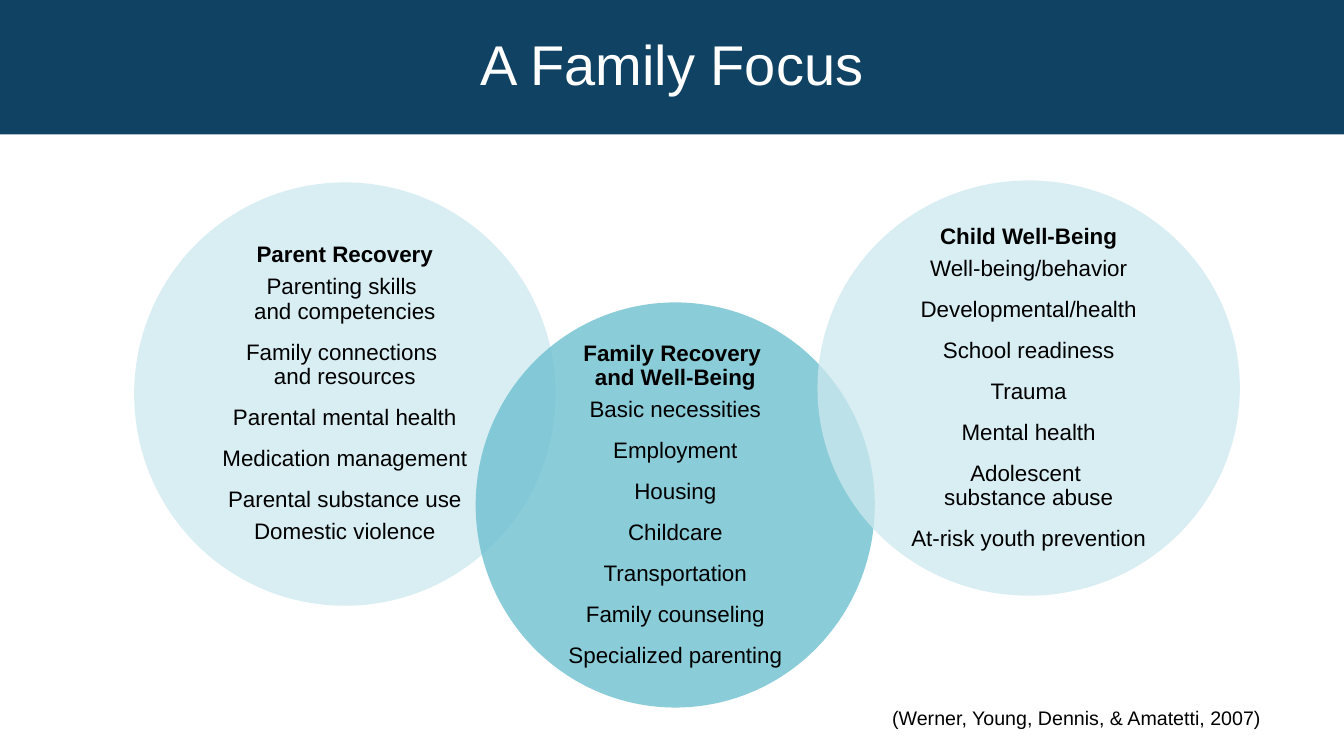
from pptx import Presentation
from pptx import util as u
from pptx.dml.color import RGBColor
from pptx.enum import shapes, text
from pptx.oxml import parse_xml
from pptx.oxml.ns import nsdecls, qn

NAVY = RGBColor(0x0F, 0x42, 0x63)
PALE = RGBColor(0xCD, 0xE9, 0xEF)
TEAL = RGBColor(0x65, 0xBC, 0xCD)
BLACK = RGBColor(0, 0, 0)
WHITE = RGBColor(255, 255, 255)
INSET = 0.146  # share of a circle's side outside its inscribed square


def add_span(para, words, size, color, bold=False):
    span = para.add_run()
    span.text = words
    span.font.name = "Arial"
    span.font.size = u.Pt(size)
    span.font.bold = bold
    span.font.color.rgb = color


deck = Presentation()
deck.slide_width, deck.slide_height = u.Pt(960), u.Pt(540)
page = deck.slides.add_slide(deck.slide_layouts[5])

# Circles: left, top, width, height, fill, heading, topics
circles = [
    (95.8, 130.3, 301, 302.4, PALE, "Parent Recovery",
     ["Parenting skills \nand competencies", "Family connections \nand resources",
      "Parental mental health", "Medication management",
      "Parental substance use", "Domestic violence"]),
    (339.8, 216, 285.1, 289.4, TEAL, "Family Recovery \nand Well-Being",
     ["Basic necessities", "Employment", "Housing", "Childcare",
      "Transportation", "Family counseling", "Specialized parenting"]),
    (583.9, 128.9, 301.7, 296.6, PALE, "Child Well-Being",
     ["Well-being/behavior", "Developmental/health", "School readiness", "Trauma",
      "Mental health", "Adolescent \nsubstance abuse", "At-risk youth prevention"]),
]
for left, top, width, height, color, heading, topics in circles:
    circle = page.shapes.add_shape(shapes.MSO_SHAPE.OVAL, u.Pt(left), u.Pt(top),
                                   u.Pt(width), u.Pt(height))
    circle.shadow.inherit = False
    circle.line.fill.background()
    circle.fill.solid()
    circle.fill.fore_color.rgb = color
    tint = circle.fill._xPr.find(qn("a:solidFill"))[0]
    tint.append(parse_xml(f'<a:alpha {nsdecls("a")} val="75000"/>'))

    # Topic list in the circle's inscribed square
    box = page.shapes.add_textbox(
        u.Pt(left + INSET * width), u.Pt(top + INSET * height),
        u.Pt(width * (1 - 2 * INSET)), u.Pt(height * (1 - 2 * INSET)))
    frame = box.text_frame
    frame.word_wrap = True
    frame.vertical_anchor = text.MSO_ANCHOR.MIDDLE
    frame.margin_left = frame.margin_right = u.Pt(5)
    frame.margin_top = frame.margin_bottom = u.Pt(5)
    for index, entry in enumerate([heading] + topics):
        para = frame.add_paragraph() if index else frame.paragraphs[0]
        para.alignment = text.PP_ALIGN.CENTER
        para.line_spacing = 0.9
        if index == 0:
            para.space_after = u.Pt(5.6)
        elif index == len(topics) or entry == "Parental substance use":
            para.space_after = u.Pt(6)
        else:
            para.space_after = u.Pt(12)
        for number, line in enumerate(entry.split("\n")):
            if number:
                para.add_line_break()
            add_span(para, line, 16, BLACK, bold=index == 0)

# Title band
title = page.shapes.title
title.left, title.top, title.width, title.height = 0, 0, deck.slide_width, u.Pt(96)
title.fill.solid()
title.fill.fore_color.rgb = NAVY
title.text_frame.auto_size = text.MSO_AUTO_SIZE.NONE
title.text_frame.vertical_anchor = text.MSO_ANCHOR.MIDDLE
para = title.text_frame.paragraphs[0]
para.alignment = text.PP_ALIGN.CENTER
para.line_spacing = 0.9
add_span(para, "A Family Focus", 40, WHITE)

# Citation
box = page.shapes.add_textbox(u.Pt(578), u.Pt(500.4), u.Pt(382), u.Pt(24.5))
box.text_frame.word_wrap = True
para = box.text_frame.paragraphs[0]
para.alignment = text.PP_ALIGN.CENTER
add_span(para, "(Werner, Young, Dennis, & Amatetti, 2007)", 14, BLACK)

deck.save("out.pptx")
